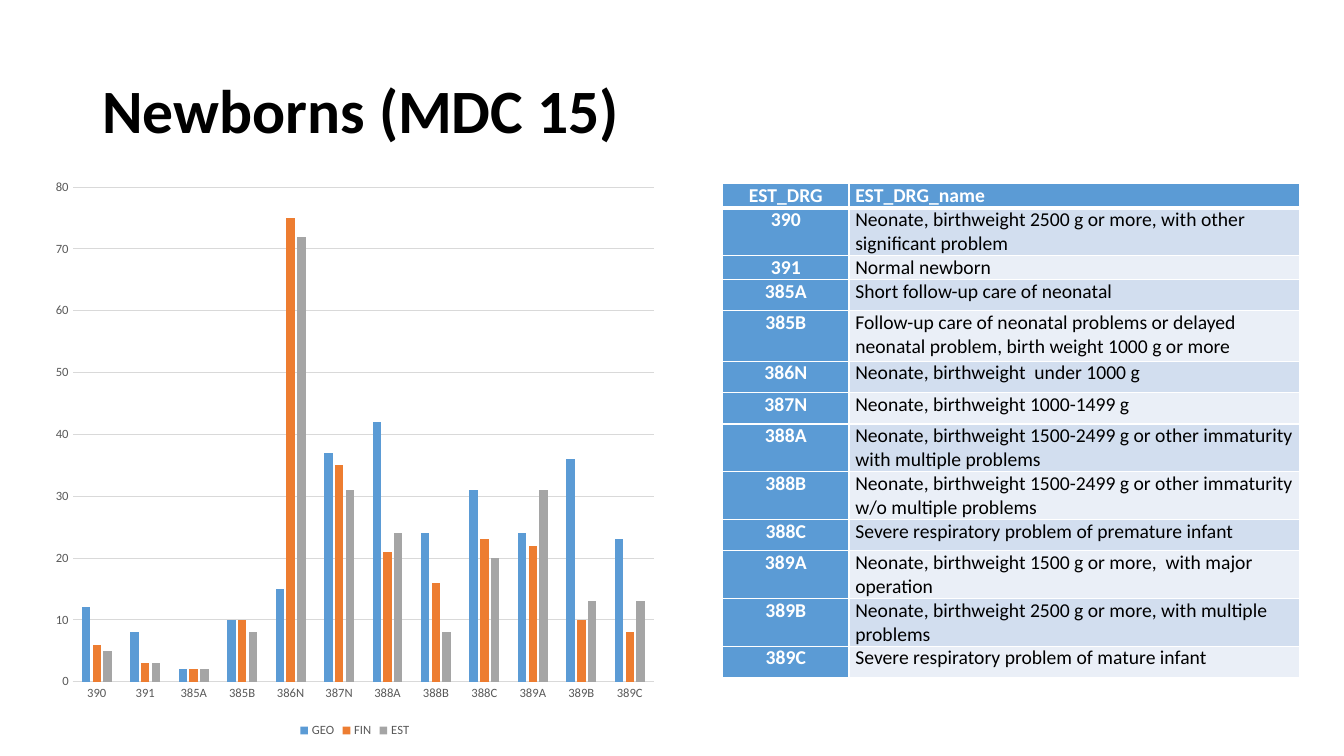
"""Build the newborn diagnosis group slide with a chart and a lookup table."""
from lxml import etree
from pptx import Presentation
from pptx.chart.data import CategoryChartData
from pptx.dml.color import RGBColor
from pptx.enum.chart import XL_CHART_TYPE, XL_LEGEND_POSITION, XL_TICK_MARK
from pptx.enum.text import MSO_ANCHOR, PP_ALIGN
from pptx.oxml.ns import qn
from pptx.util import Pt

COLUMNS = XL_CHART_TYPE.COLUMN_CLUSTERED
BOTTOM = XL_LEGEND_POSITION.BOTTOM
NO_TICK = XL_TICK_MARK.NONE
LEFT, CENTER = PP_ALIGN.LEFT, PP_ALIGN.CENTER
TOP, MIDDLE = MSO_ANCHOR.TOP, MSO_ANCHOR.MIDDLE

FONT = "Calibri"
BLACK = RGBColor(0x00, 0x00, 0x00)
WHITE = RGBColor(0xFF, 0xFF, 0xFF)
GRAY = RGBColor(0x59, 0x59, 0x59)
GRID = RGBColor(0xD9, 0xD9, 0xD9)
BLUE = RGBColor(0x5B, 0x9B, 0xD5)
ORANGE = RGBColor(0xED, 0x7D, 0x31)
SILVER = RGBColor(0xA5, 0xA5, 0xA5)
BANDS = (RGBColor(0xD2, 0xDE, 0xEF), RGBColor(0xEA, 0xEF, 0xF7))

HEADER = ("EST_DRG", "EST_DRG_name", 17.2)
GROUPS = [
    ("390", "Neonate, birthweight 2500 g or more, with other significant problem", 34),
    ("391", "Normal newborn", 17.2),
    ("385A", "Short follow-up care of neonatal", 22.4),
    ("385B", "Follow-up care of neonatal problems or delayed neonatal problem, "
             "birth weight 1000 g or more", 36),
    ("386N", "Neonate, birthweight  under 1000 g", 22.4),
    ("387N", "Neonate, birthweight 1000-1499 g", 22.4),
    ("388A", "Neonate, birthweight 1500-2499 g or other immaturity "
             "with multiple problems", 34),
    ("388B", "Neonate, birthweight 1500-2499 g or other immaturity "
             "w/o multiple problems", 34),
    ("388C", "Severe respiratory problem of premature infant", 22.4),
    ("389A", "Neonate, birthweight 1500 g or more,  with major operation", 34),
    ("389B", "Neonate, birthweight 2500 g or more, with multiple problems", 34),
    ("389C", "Severe respiratory problem of mature infant", 22.4),
]
SERIES = [
    ("GEO", BLUE, (12, 8, 2, 10, 15, 37, 42, 24, 31, 24, 36, 23)),
    ("FIN", ORANGE, (6, 3, 2, 10, 75, 35, 21, 16, 23, 22, 10, 8)),
    ("EST", SILVER, (5, 3, 2, 8, 72, 31, 24, 8, 20, 31, 13, 13)),
]


def style_font(font, size, color, bold=False):
    """Set typeface, size, colour and weight of a font."""
    font.name, font.size, font.bold = FONT, Pt(size), bold
    font.color.rgb = color


def add_run(p, text, size, color, bold, align):
    """Add one formatted run to a paragraph."""
    p.alignment = align
    r = p.add_run()
    r.text = text
    style_font(r.font, size, color, bold)


def set_title(s, text):
    """Place and fill the title placeholder."""
    sp = s.shapes.title
    sp.left, sp.top, sp.width, sp.height = Pt(66), Pt(28.75), Pt(828), Pt(104.4)
    tf = sp.text_frame
    tf.vertical_anchor = MIDDLE
    p = tf.paragraphs[0]
    p.line_spacing = 0.9
    add_run(p, text, 44, BLACK, True, LEFT)


def style_line(line):
    """Give an axis or grid line its thin gray stroke."""
    line.color.rgb = GRID
    line.width = Pt(0.75)


def style_axis(axis):
    """Format the labels and tick marks of an axis."""
    axis.major_tick_mark = axis.minor_tick_mark = NO_TICK
    style_font(axis.tick_labels.font, 9, GRAY)


def add_group_chart(s):
    """Add the clustered columns by diagnosis group."""
    data = CategoryChartData()
    data.categories = [code for code, _, _ in GROUPS]
    for name, _, values in SERIES:
        data.add_series(name, values)
    chart = s.shapes.add_chart(
        COLUMNS, Pt(31), Pt(120.25), Pt(445), Pt(409.7), data).chart
    style_font(chart.font, 10, BLACK)
    chart.has_title = False
    chart.has_legend = True
    chart.legend.position = BOTTOM
    chart.legend.include_in_layout = False
    style_font(chart.legend.font, 9, GRAY)

    plot = chart.plots[0]
    plot.gap_width, plot.overlap, plot.vary_by_categories = 219, -27, False
    for series, (_, color, _) in zip(plot.series, SERIES):
        series.format.fill.solid()
        series.format.fill.fore_color.rgb = color
        series.invert_if_negative = False

    style_axis(chart.category_axis)
    style_line(chart.category_axis.format.line)
    axis = chart.value_axis
    style_axis(axis)
    axis.format.line.fill.background()
    axis.minimum_scale, axis.maximum_scale, axis.major_unit = 0, 80, 10
    axis.has_major_gridlines = True
    style_line(axis.major_gridlines.format.line)


def set_borders(cell, top, bottom):
    """Draw white borders, with the top and bottom widths in points."""
    tc_pr = cell._tc.get_or_add_tcPr()
    widths = {"lnL": 1, "lnR": 1, "lnT": top, "lnB": bottom}
    for i, (tag, width) in enumerate(widths.items()):
        ln = etree.Element(qn("a:" + tag), w=str(Pt(width)))
        fill = etree.SubElement(ln, qn("a:solidFill"))
        etree.SubElement(fill, qn("a:srgbClr"), val=str(WHITE))
        tc_pr.insert(i, ln)


def fill_cell(cell, text, fill, color, bold, align):
    """Write one table cell with its fill and margins."""
    cell.margin_left = cell.margin_right = Pt(4.5)
    cell.margin_top = cell.margin_bottom = Pt(0)
    cell.vertical_anchor = TOP
    cell.fill.solid()
    cell.fill.fore_color.rgb = fill
    add_run(cell.text_frame.paragraphs[0], text, 14, color, bold, align)


def add_group_table(s):
    """Add the table of group codes and names."""
    rows = [HEADER] + GROUPS
    height = sum(h for _, _, h in rows)
    table = s.shapes.add_table(
        len(rows), 2, Pt(516.2), Pt(131.2), Pt(412.3), Pt(height)).table
    table.columns[0].width, table.columns[1].width = Pt(90.3), Pt(322)
    for i, (code, name, h) in enumerate(rows):
        table.rows[i].height = Pt(h)
        code_cell, name_cell = table.cell(i, 0), table.cell(i, 1)
        fill_cell(code_cell, code, BLUE, WHITE, True, CENTER)
        if i == 0:
            fill_cell(name_cell, name, BLUE, WHITE, True, LEFT)
        else:
            fill_cell(name_cell, name, BANDS[(i - 1) % 2], BLACK, False, LEFT)
        for cell in (code_cell, name_cell):
            set_borders(cell, 3 if i == 1 else 1, 3 if i == 0 else 1)


def main():
    """Build and save the slide."""
    prs = Presentation()
    prs.slide_width, prs.slide_height = Pt(960), Pt(540)
    s = prs.slides.add_slide(prs.slide_layouts[5])
    set_title(s, "Newborns (MDC 15)")
    add_group_chart(s)
    add_group_table(s)
    prs.save("out.pptx")


if __name__ == "__main__":
    main()
